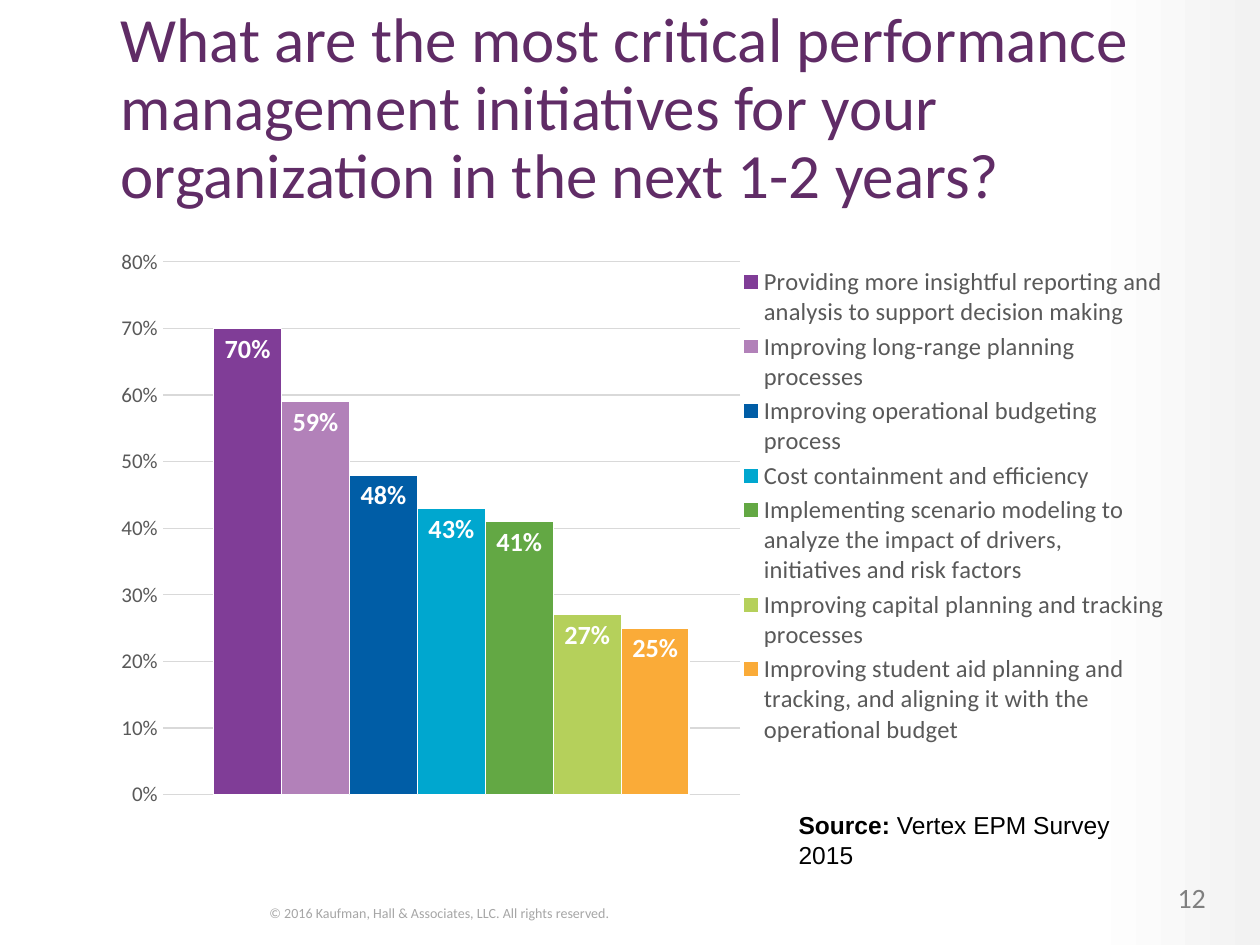
"""Build the survey slide on critical performance management initiatives."""
import dataclasses

import pptx
import pptx.chart.data
import pptx.dml.color
import pptx.enum.chart
import pptx.enum.shapes
import pptx.enum.text
import pptx.oxml
import pptx.oxml.ns
import pptx.util

Cm = pptx.util.Cm
Pt = pptx.util.Pt
qn = pptx.oxml.ns.qn
PP_ALIGN = pptx.enum.text.PP_ALIGN
MSO_AUTO_SIZE = pptx.enum.text.MSO_AUTO_SIZE


@dataclasses.dataclass(frozen=True)
class Theme:
    font: str = "Calibri"
    source_font: str = "Arial"
    title: str = "602C66"
    black: str = "000000"
    white: str = "FFFFFF"
    band: str = "F2F2F2"
    chart_text: str = "595959"
    grid: str = "D9D9D9"
    number: str = "808080"
    copyright: str = "A6A6A6"
    title_size: int = 36
    number_size: int = 16
    label_size: int = 15
    text_size: int = 14
    axis_size: int = 12
    copyright_size: int = 8


THEME = Theme()
CHART_WIDTH, CHART_HEIGHT = 21.67, 12.37

INITIATIVES = [
    ("Providing more insightful reporting and analysis to support decision making", 0.70, "803D97"),
    ("Improving long-range planning processes", 0.59, "B281B9"),
    ("Improving operational budgeting process", 0.48, "005DA6"),
    ("Cost containment and efficiency", 0.43, "00A7CF"),
    ("Implementing scenario modeling to analyze the impact of drivers, "
     "initiatives and risk factors", 0.41, "63A844"),
    ("Improving capital planning and tracking processes", 0.27, "B5D05B"),
    ("Improving student aid planning and tracking, and aligning it with the "
     "operational budget", 0.25, "FAAB38"),
]


def rgb(value):
    return pptx.dml.color.RGBColor.from_string(value)


def set_font(font, size, color, bold=False, name=THEME.font):
    font.name = name
    font.size = Pt(size)
    font.bold = bold
    font.color.rgb = rgb(color)


def add_band(s):
    sp = s.shapes.add_shape(pptx.enum.shapes.MSO_SHAPE.RECTANGLE,
                            Cm(21.9), 0, Cm(3.5), Cm(19.05))
    sp.shadow.inherit = False
    sp.line.fill.background()
    sp.fill.gradient()
    sp.fill.gradient_angle = 0
    for stop, color in zip(sp.fill.gradient_stops, (THEME.white, THEME.band)):
        stop.color.rgb = rgb(color)
    s.shapes.title._element.addprevious(sp._element)


def add_title(s, text):
    sp = s.shapes.title
    sp.left, sp.top, sp.width, sp.height = Cm(2.18), Cm(0.38), Cm(21.9), Cm(3.68)
    tf = sp.text_frame
    tf.text = text
    tf.auto_size = MSO_AUTO_SIZE.NONE
    tf.vertical_anchor = pptx.enum.text.MSO_ANCHOR.MIDDLE
    p = tf.paragraphs[0]
    p.alignment = PP_ALIGN.LEFT
    p.line_spacing = 0.9
    set_font(p.runs[0].font, THEME.title_size, THEME.title)


def add_text(s, box, runs, size, color, name=THEME.font, align=PP_ALIGN.LEFT, wrap=True):
    tf = s.shapes.add_textbox(*map(Cm, box)).text_frame
    tf.word_wrap = wrap
    tf.auto_size = MSO_AUTO_SIZE.SHAPE_TO_FIT_TEXT
    p = tf.paragraphs[0]
    p.alignment = align
    for text, bold in runs:
        r = p.add_run()
        r.text = text
        set_font(r.font, size, color, bold, name)


def manual_layout(left, top, width, height, inner=False):
    target = '<c:layoutTarget val="inner"/>' if inner else ""
    return pptx.oxml.parse_xml(
        f'<c:layout {pptx.oxml.ns.nsdecls("c")}><c:manualLayout>{target}'
        '<c:xMode val="edge"/><c:yMode val="edge"/>'
        f'<c:x val="{left / CHART_WIDTH}"/><c:y val="{top / CHART_HEIGHT}"/>'
        f'<c:w val="{width / CHART_WIDTH}"/><c:h val="{height / CHART_HEIGHT}"/>'
        '</c:manualLayout></c:layout>')


def format_axes(chart):
    chart.category_axis.visible = False
    axis = chart.value_axis
    axis.minimum_scale, axis.maximum_scale, axis.major_unit = 0, 0.8, 0.1
    axis.major_tick_mark = pptx.enum.chart.XL_TICK_MARK.NONE
    axis.format.line.fill.background()
    axis.major_gridlines.format.line.color.rgb = rgb(THEME.grid)
    axis.major_gridlines.format.line.width = Pt(0.75)
    axis.tick_labels.number_format = "0%"
    axis.tick_labels.number_format_is_linked = False
    set_font(axis.tick_labels.font, THEME.axis_size, THEME.chart_text)


def format_series(series, color):
    series.format.fill.solid()
    series.format.fill.fore_color.rgb = rgb(color)
    series.format.line.color.rgb = rgb(THEME.white)
    series.format.line.width = Pt(0.75)
    labels = series.data_labels
    labels.show_value = True
    labels.number_format = "0%"
    labels.number_format_is_linked = False
    labels.position = pptx.enum.chart.XL_LABEL_POSITION.INSIDE_END
    set_font(labels.font, THEME.label_size, THEME.white, True)


def place_parts(chart):
    area = chart.plots[0]._element.getparent()
    for old in area.findall(qn("c:layout")):
        area.remove(old)
    area.insert(0, manual_layout(1.1, 0.58, 11.64, 10.74, inner=True))
    legend_pos = chart.legend._element.find(qn("c:legendPos"))
    legend_pos.addnext(manual_layout(12.8, 0.6, 8.5, 9.8))


def add_column_chart(s):
    data = pptx.chart.data.CategoryChartData(number_format="0%")
    data.categories = ["1"]
    for name, value, _ in INITIATIVES:
        data.add_series(name, [value])
    chart = s.shapes.add_chart(pptx.enum.chart.XL_CHART_TYPE.COLUMN_CLUSTERED, Cm(2.18), Cm(4.7),
                               Cm(CHART_WIDTH), Cm(CHART_HEIGHT), data).chart
    set_font(chart.font, THEME.axis_size, THEME.chart_text)
    chart.has_title = False
    chart.has_legend = True
    chart.legend.position = pptx.enum.chart.XL_LEGEND_POSITION.RIGHT
    chart.legend.include_in_layout = False
    set_font(chart.legend.font, THEME.text_size, THEME.chart_text)
    plot = chart.plots[0]
    plot.vary_by_categories = False
    plot.gap_width = 150
    plot.overlap = 0
    for series, (_, _, color) in zip(plot.series, INITIATIVES):
        format_series(series, color)
    format_axes(chart)
    place_parts(chart)


def main():
    prs = pptx.Presentation()
    prs.slide_width, prs.slide_height = Cm(25.4), Cm(19.05)
    s = prs.slides.add_slide(prs.slide_layouts[5])
    add_band(s)
    add_text(s, (22.86, 17.63, 1.7, 0.94), [("12", False)],
             THEME.number_size, THEME.number, align=PP_ALIGN.RIGHT)
    add_text(s, (5.18, 18.11, 12.7, 0.61),
             [("© 2016 Kaufman, Hall & Associates, LLC. All rights reserved.", False)],
             THEME.copyright_size, THEME.copyright)
    add_title(s, "What are the most critical performance management initiatives "
                 "for your organization in the next 1-2 years?")
    add_column_chart(s)
    add_text(s, (15.85, 16.21, 8, 0.86),
             [("Source:", True), (" Vertex EPM Survey 2015", False)],
             THEME.text_size, THEME.black, THEME.source_font, wrap=False)
    prs.save("out.pptx")


if __name__ == "__main__":
    main()
